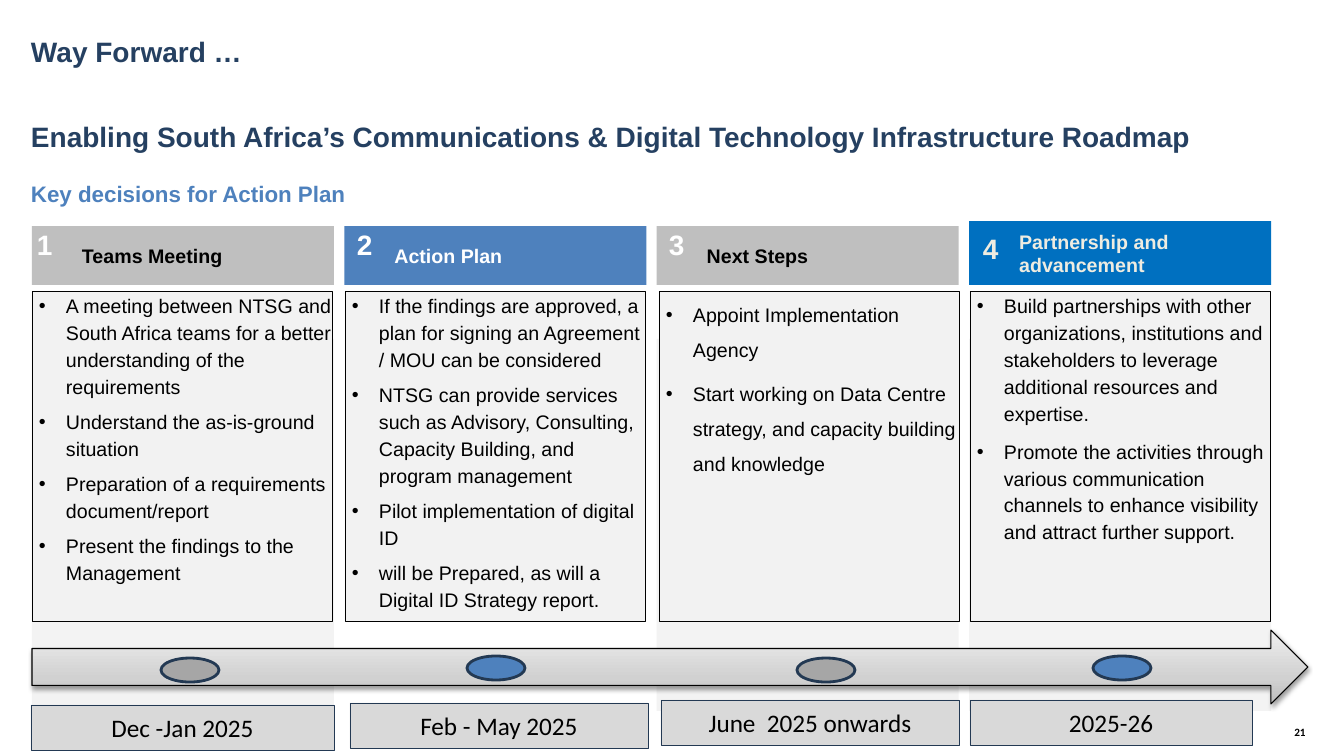
from lxml import etree
from pptx import Presentation
from pptx.dml.color import RGBColor
from pptx.enum.shapes import MSO_SHAPE
from pptx.enum.text import MSO_ANCHOR, PP_ALIGN
from pptx.oxml import parse_xml
from pptx.util import Pt

RECT, OVAL, ARROW = MSO_SHAPE.RECTANGLE, MSO_SHAPE.OVAL, MSO_SHAPE.RIGHT_ARROW
TOP, MIDDLE = MSO_ANCHOR.TOP, MSO_ANCHOR.MIDDLE
LEFT, CENTER = PP_ALIGN.LEFT, PP_ALIGN.CENTER

BLACK = RGBColor(0x00, 0x00, 0x00)
WHITE = RGBColor(0xFF, 0xFF, 0xFF)
CREAM = RGBColor(0xEE, 0xEC, 0xE1)
NAVY = RGBColor(0x25, 0x40, 0x61)
EDGE = RGBColor(0x23, 0x39, 0x53)
BLUE = RGBColor(0x4E, 0x81, 0xBD)
BRIGHT = RGBColor(0x00, 0x70, 0xC0)
SILVER = RGBColor(0xBF, 0xBF, 0xBF)
GREY = RGBColor(0xA6, 0xA6, 0xA6)
PALE = RGBColor(0xF2, 0xF2, 0xF2)
STRIP = RGBColor(0xF3, 0xF3, 0xF3)
TAG = RGBColor(0xD9, 0xD9, 0xD9)

TITLE = "Way Forward …"
ROADMAP = "Enabling South Africa’s Communications & Digital Technology Infrastructure Roadmap"
SUBHEAD = "Key decisions for Action Plan"
PAGE = "21"

STEPS = [
    dict(head="Teams Meeting", fill=SILVER, ink=BLACK, num=WHITE, dot=GREY,
         top=226, strip=True, panel=32, mark=(37, 235), oval=(161, 658),
         date="Dec -Jan 2025", tag=(31, 705, 303), lead=1.14, after=6,
         items=["A meeting between NTSG and South Africa teams for a better "
                "understanding of the requirements",
                "Understand the as-is-ground situation",
                "Preparation of a requirements document/report",
                "Present the findings to the Management"]),
    dict(head="Action Plan", fill=BLUE, ink=WHITE, num=WHITE, dot=BLUE,
         top=226, strip=False, panel=345, mark=(357, 235), oval=(467, 656),
         date="Feb - May 2025", tag=(350, 703, 298), lead=1.14, after=6,
         items=["If the findings are approved, a plan for signing an Agreement "
                "/ MOU can be considered",
                "NTSG can provide services such as Advisory, Consulting, "
                "Capacity Building, and program management",
                "Pilot implementation of digital ID",
                "will be Prepared, as will a Digital ID Strategy report."]),
    dict(head="Next Steps", fill=SILVER, ink=BLACK, num=WHITE, dot=GREY,
         top=226, strip=True, panel=659, mark=(669, 235), oval=(797, 658),
         date="June  2025 onwards", tag=(661, 700, 298), lead=1.5, after=6,
         items=["Appoint Implementation Agency",
                "Start working on Data Centre strategy, and capacity building "
                "and knowledge"]),
    dict(head="Partnership and advancement", fill=BRIGHT, ink=CREAM, num=CREAM,
         dot=BLUE, top=221, strip=True, panel=970, mark=(983, 239),
         oval=(1093, 656), date="2025-26", tag=(970, 700, 282), lead=1.14, after=8,
         items=["Build partnerships with other organizations, institutions and "
                "stakeholders to leverage additional resources and expertise.",
                "Promote the activities through various communication channels "
                "to enhance visibility and attract further support."]),
]

SHADES = [(0, "BDBDBD"), (35, "D1D1D1"), (100, "EEEEEE")]
NS = "http://schemas.openxmlformats.org/drawingml/2006/main"
START, PITCH, WIDE, BASE = 32, 312.4, 302, 285


def px(n):
    return round(n * 914400 / 100.8)


deck = Presentation()
deck.slide_width, deck.slide_height = px(1344), px(756)
slide = deck.slides.add_slide(deck.slide_layouts[6])


def write(shape, text, size=14, color=BLACK, font="Arial", bold=False,
          align=LEFT, anchor=TOP, pad=(10, 5, 10, 5), lead=None, after=None,
          bullet=False, wrap=True):
    frame = shape.text_frame
    frame.word_wrap = wrap
    frame.vertical_anchor = anchor
    (frame.margin_left, frame.margin_top,
     frame.margin_right, frame.margin_bottom) = [px(n) for n in pad]
    lines = [text] if isinstance(text, str) else text
    for i, line in enumerate(lines):
        para = frame.add_paragraph() if i else frame.paragraphs[0]
        para.alignment = align
        if lead:
            para.line_spacing = lead
        if after:
            para.space_after = Pt(after)
        if bullet:
            props = para._p.get_or_add_pPr()
            props.set("marL", str(px(34)))
            props.set("indent", str(px(-27)))
            etree.SubElement(props, f"{{{NS}}}buFont", typeface="Arial")
            etree.SubElement(props, f"{{{NS}}}buChar", char="•")
        run = para.add_run()
        run.text = line
        run.font.size, run.font.bold, run.font.name = Pt(size), bold, font
        run.font.color.rgb = color


def label(box, text, **form):
    shape = slide.shapes.add_textbox(*[px(n) for n in box])
    write(shape, text, **form)


def block(kind, box, fill=None, line=None, weight=0.25):
    shape = slide.shapes.add_shape(kind, *[px(n) for n in box])
    shape.shadow.inherit = False
    if fill is not None:
        shape.fill.solid()
        shape.fill.fore_color.rgb = fill
    if line is None:
        shape.line.fill.background()
    else:
        shape.line.color.rgb = line
        shape.line.width = Pt(weight)
    return shape


def shade(shape):
    stops = "".join(f'<a:gs pos="{pos * 1000}"><a:srgbClr val="{hue}"/></a:gs>'
                    for pos, hue in SHADES)
    props = shape._element.spPr
    props.insert(2, parse_xml(
        f'<a:gradFill xmlns:a="{NS}" rotWithShape="1"><a:gsLst>{stops}</a:gsLst>'
        '<a:lin ang="16200000" scaled="1"/></a:gradFill>'))
    props.find(f"{{{NS}}}effectLst").append(parse_xml(
        f'<a:outerShdw xmlns:a="{NS}" blurRad="{Pt(3.1)}" dist="{Pt(1.6)}" '
        'dir="5400000" rotWithShape="0"><a:srgbClr val="000000">'
        '<a:alpha val="38000"/></a:srgbClr></a:outerShdw>'))


label((1278, 718, 44, 29), PAGE, size=8, font="Calibri", bold=True,
      align=CENTER, anchor=MIDDLE)
label((21, 11, 1286, 81), TITLE, size=20, color=NAVY, bold=True, anchor=MIDDLE)
label((11, 109, 1268, 46), ROADMAP, size=20, color=NAVY, bold=True,
      pad=(20, 5, 10, 5), lead=1.15, after=6)
label((21, 175, 339, 37), SUBHEAD, size=16, color=BLUE, bold=True, wrap=False)

for i, step in enumerate(STEPS):
    left = START + i * PITCH
    if step["strip"]:
        block(RECT, (left, 339, WIDE, 372), STRIP)
    head = block(RECT, (left, step["top"], WIDE, BASE - step["top"]), step["fill"])
    write(head, step["head"], color=step["ink"], bold=True, anchor=MIDDLE,
          pad=(50, 5, 10, 5))
    label((*step["mark"], 30, 35), str(i + 1), size=20, color=step["num"],
          bold=True, pad=(0, 0, 0, 0), lead=0.75)
    panel = block(RECT, (step["panel"], 291, 300, 330), PALE, BLACK)
    write(panel, step["items"], pad=(0, 0, 0, 0), lead=step["lead"],
          after=step["after"], bullet=True)

shade(block(ARROW, (32, 630, 1276, 74), line=BLACK, weight=0.75))

for step in STEPS:
    block(OVAL, (*step["oval"], 58, 24), step["dot"], EDGE, 2)
    tag = block(RECT, (*step["tag"], 45), TAG, EDGE)
    write(tag, step["date"], size=18, font="Calibri", align=CENTER, anchor=MIDDLE)

deck.save("out.pptx")
